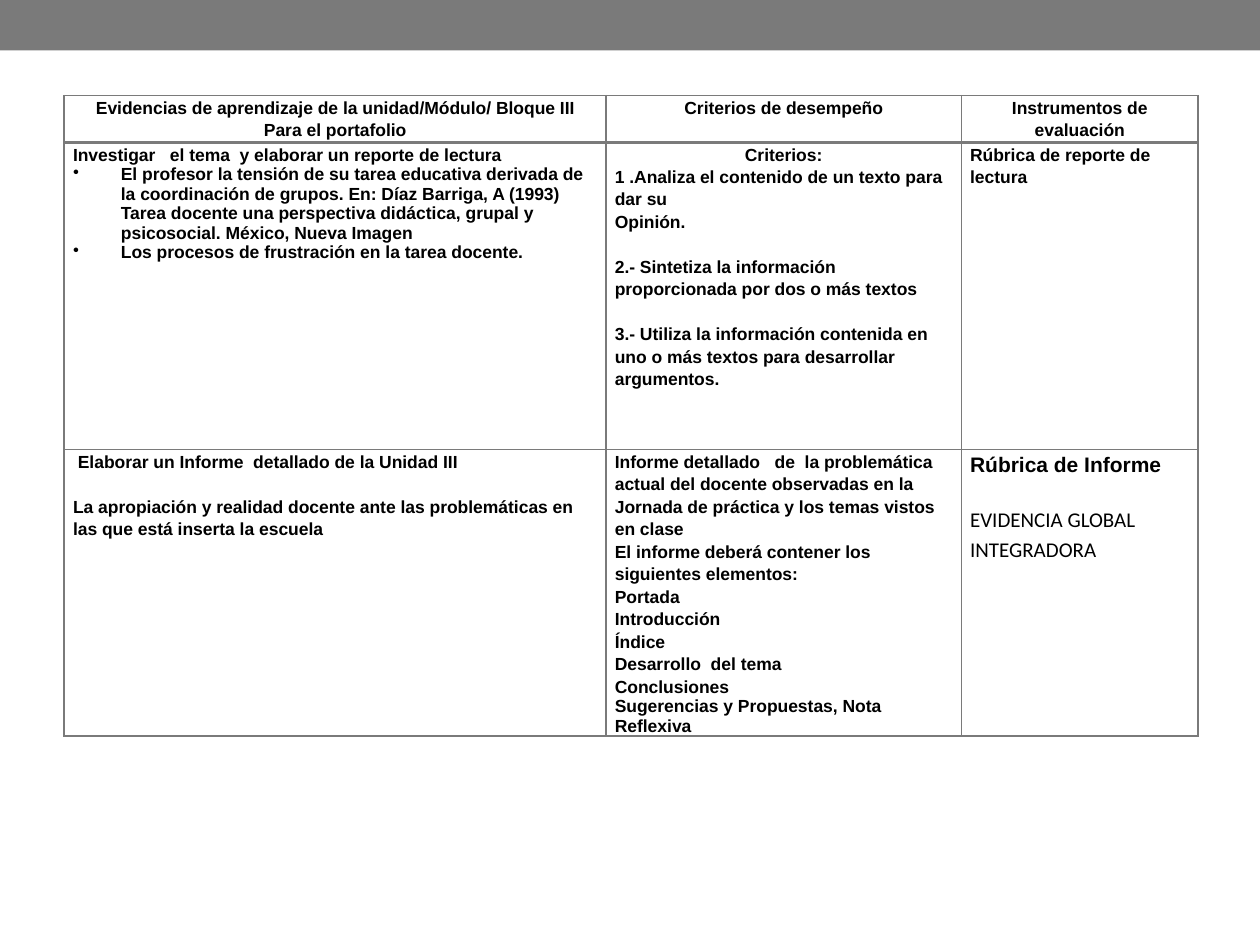
from dataclasses import dataclass

from lxml.etree import SubElement as Sub
from pptx import Presentation
from pptx.dml.color import RGBColor as Rgb
from pptx.enum.shapes import MSO_SHAPE as Shape
from pptx.enum.text import PP_ALIGN as Align
from pptx.oxml.ns import qn
from pptx.util import Inches, Pt


@dataclass(frozen=True)
class Theme:
    gray: str = "7A7A7A"
    white: str = "FFFFFF"
    black: str = "000000"
    font: str = "Arial"
    alt: str = "Calibri"
    body: float = 10
    big: float = 12
    lead: float = 1.15
    gap: float = 12.8
    wide: float = 15.5


THEME = Theme()


@dataclass(frozen=True)
class Para:
    text: str
    align: Align = Align.LEFT
    lead: float = THEME.lead
    size: float = THEME.body
    font: str = THEME.font
    bold: bool = True
    before: float = 0
    bullet: bool = False


class Deck:
    """Build slides from one theme."""

    def __init__(self, theme, width, height):
        self.theme = theme
        self.prs = Presentation()
        self.prs.slide_width = Inches(width)
        self.prs.slide_height = Inches(height)

    def add(self):
        self.slide = self.prs.slides.add_slide(self.prs.slide_layouts[6])

    def band(self, left, top, width, height):
        box = self.slide.shapes.add_shape(
            Shape.RECTANGLE, *map(Inches, (left, top, width, height)))
        box.shadow.inherit = False
        box.fill.solid()
        box.fill.fore_color.rgb = Rgb.from_string(self.theme.gray)
        box.line.fill.background()

    def table(self, left, top, cols, rows, cells):
        size = map(Inches, (left, top, sum(cols), sum(rows)))
        grid = self.slide.shapes.add_table(len(rows), len(cols), *size).table
        grid.horz_banding = False
        for col, width in zip(grid.columns, cols):
            col.width = Inches(width)
        for row, height in zip(grid.rows, rows):
            row.height = Inches(height)
        for r, line in enumerate(cells):
            for c, paras in enumerate(line):
                cell = grid.cell(r, c)
                self.edges(cell, top=2 if r == 1 else 1, foot=2 if r == 0 else 1)
                cell.fill.solid()
                cell.fill.fore_color.rgb = Rgb.from_string(self.theme.white)
                cell.margin_left = cell.margin_right = Inches(0.07)
                cell.margin_top = cell.margin_bottom = 0
                self.text(cell.text_frame, paras)

    def edges(self, cell, top, foot):
        props = cell._tc.get_or_add_tcPr()
        for side, width in zip("LRTB", (1, 1, top, foot)):
            line = Sub(props, qn(f"a:ln{side}"), w=str(Pt(width)))
            fill = Sub(line, qn("a:solidFill"))
            Sub(fill, qn("a:srgbClr"), val=self.theme.gray)

    def text(self, frame, paras):
        for i, item in enumerate(paras):
            para = frame.add_paragraph() if i else frame.paragraphs[0]
            para.text = item.text
            para.alignment = item.align
            para.line_spacing = item.lead
            if item.before:
                para.space_before = Pt(item.before)
            if item.bullet:
                props = para._p.get_or_add_pPr()
                props.set("marL", str(Inches(0.38)))
                props.set("indent", str(Inches(-0.38)))
                Sub(props, qn("a:buChar"), char="•")
            font = para.font
            font.name, font.size, font.bold = item.font, Pt(item.size), item.bold
            font.color.rgb = Rgb.from_string(self.theme.black)

    def save(self):
        self.prs.save("out.pptx")


def head(*texts):
    return [Para(text, Align.CENTER) for text in texts]


def plain(*texts):
    return [Para(text) for text in texts]


def apart(*texts):
    return [Para(text, before=THEME.gap) for text in texts]


def points(*texts):
    return [Para(text, lead=1, bullet=True) for text in texts]


def parts(*texts):
    return [Para(text, Align.JUSTIFY) for text in texts]


CELLS = [
    [
        head("Evidencias de aprendizaje de la unidad/Módulo/ Bloque III",
             "Para el portafolio"),
        head("Criterios de desempeño"),
        head("Instrumentos de evaluación"),
    ],
    [
        plain("Investigar   el tema  y elaborar un reporte de lectura")
        + points(
            "El profesor la tensión de su tarea educativa derivada de la "
            "coordinación de grupos. En: Díaz Barriga, A (1993) Tarea docente "
            "una perspectiva didáctica, grupal y psicosocial. México, Nueva Imagen",
            "Los procesos de frustración en la tarea docente."),
        head("Criterios:")
        + plain("1 .Analiza el contenido de un texto para dar su", "Opinión.")
        + apart(
            "2.- Sintetiza la información proporcionada por dos o más textos",
            "3.- Utiliza la información contenida en uno o más textos para "
            "desarrollar argumentos."),
        plain("Rúbrica de reporte de lectura"),
    ],
    [
        plain(" Elaborar un Informe  detallado de la Unidad III")
        + apart("La apropiación y realidad docente ante las problemáticas en "
                "las que está inserta la escuela"),
        plain("Informe detallado   de  la problemática actual del docente "
              "observadas en la Jornada de práctica y los temas vistos en clase",
              "El informe deberá contener los siguientes elementos:")
        + parts("Portada", "Introducción", "Índice", "Desarrollo  del tema",
                "Conclusiones")
        + [Para("Sugerencias y Propuestas, Nota Reflexiva", lead=1)],
        [Para("Rúbrica de Informe", size=THEME.big),
         Para("EVIDENCIA GLOBAL INTEGRADORA", size=THEME.big, font=THEME.alt,
              bold=False, before=THEME.wide)],
    ],
]


def main():
    deck = Deck(THEME, 10, 7.5)
    deck.add()
    deck.band(0, 0, 10, 0.4)
    deck.table(0.51, 0.76, (4.3, 2.82, 1.88), (0.37, 2.44, 2.27), CELLS)
    deck.save()


if __name__ == "__main__":
    main()
